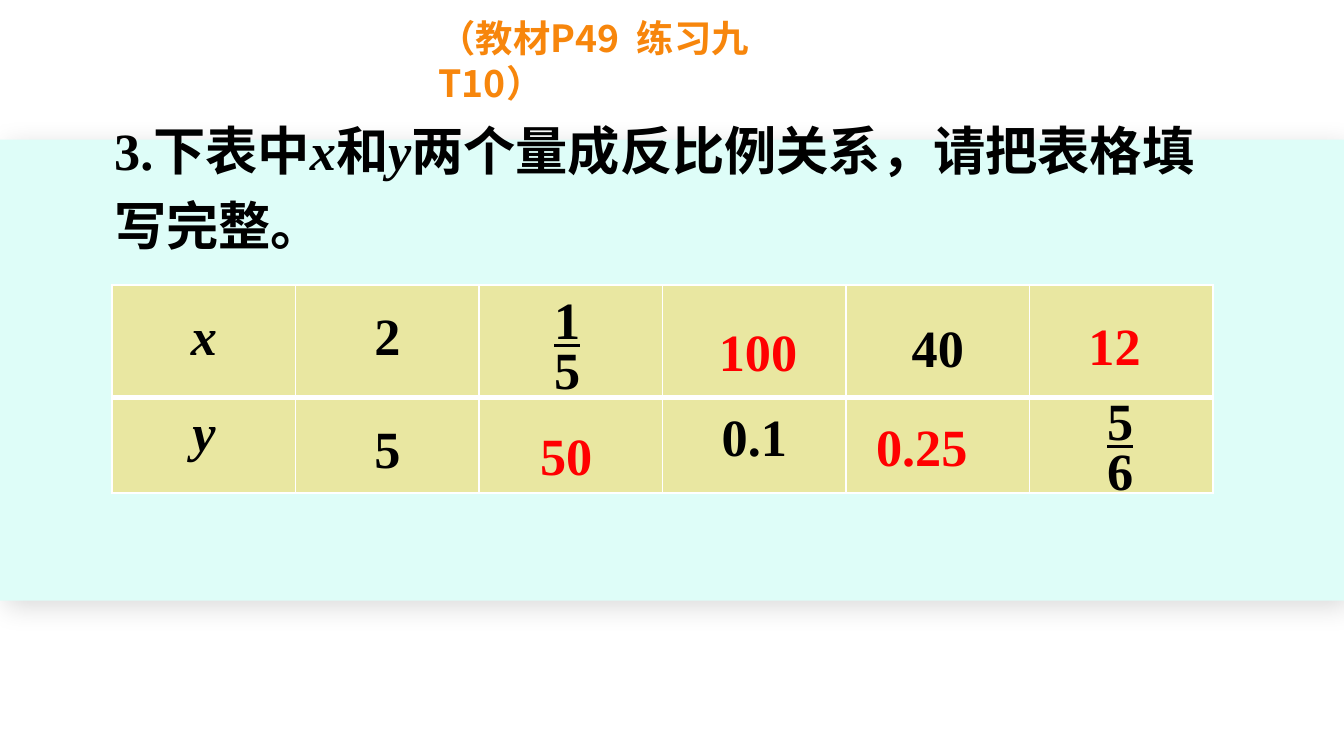
from dataclasses import dataclass
from typing import Optional

from lxml import etree
from pptx import Presentation
from pptx.dml.color import RGBColor
from pptx.enum.shapes import MSO_SHAPE
from pptx.enum.text import MSO_ANCHOR, MSO_AUTO_SIZE, PP_ALIGN
from pptx.oxml.ns import qn
from pptx.util import Pt

PX = 4572  # 200 px to the inch
PAGE_WIDTH, PAGE_HEIGHT = 2000, 1125
TITLE_ONLY = 5
RECTANGLE = MSO_SHAPE.RECTANGLE
TOP = MSO_ANCHOR.TOP
LEFT, CENTER = PP_ALIGN.LEFT, PP_ALIGN.CENTER
GROW, FIXED = MSO_AUTO_SIZE.SHAPE_TO_FIT_TEXT, MSO_AUTO_SIZE.NONE

SERIF, HAN = "Times New Roman", "Noto Sans CJK SC"
WHITE, BLACK, RED, ORANGE = "FFFFFF", "000000", "FF0000", "F7860C"
MINT, AMBER = "DEFDF8", "FFC000"

COLUMN_WIDTH = 273
ROW_HEIGHTS = (168, 142)
BOTTOM_BORDERS = (3, 1)


@dataclass(frozen=True)
class Entry:
    text: str
    spacing: float = 1.3
    italic: bool = False


@dataclass(frozen=True)
class Answer:
    text: str
    left: int
    top: int
    width: int
    height: int = 132
    spacing: float = 1.2
    auto_size: MSO_AUTO_SIZE = GROW


@dataclass(frozen=True)
class Fraction:
    numerator: str
    denominator: str
    left: int
    top: int
    height: int
    auto_size: MSO_AUTO_SIZE


QUESTION = (
    ("3.下表中", False),
    ("x", True),
    ("和", False),
    ("y", True),
    ("两个量成反比例关系，请把表格填写完整。", False),
)
ROWS: tuple[tuple[Optional[Entry], ...], ...] = (
    (Entry("x", italic=True), Entry("2"), None, None, Entry("40", 1.5), None),
    (Entry("y", 1.0, True), Entry("5"), None, Entry("0.1", 1.1), None, None),
)
ANSWERS = (
    Answer("50", 784, 601, 118),
    Answer("100", 1050, 446, 156),
    Answer("0.25", 1284, 607, 198, 140, 1.0, FIXED),
    Answer("12", 1600, 438, 118),
)
FRACTIONS = (
    Fraction("1", "5", 794, 436, 170, GROW),
    Fraction("5", "6", 1617, 586, 160, FIXED),
)


def color(value: str) -> RGBColor:
    return RGBColor.from_string(value)


def write(para, text: str, *, size: int = 28, font: str = SERIF, ink: str = BLACK,
          italic: bool = False, underline: bool = False,
          align=LEFT, spacing: float = 1.0) -> None:
    """Append one formatted bold run and set the paragraph's layout."""
    para.alignment = align
    para.line_spacing = spacing
    span = para.add_run()
    span.text = text
    span.font.name = font
    span.font.size = Pt(size)
    span.font.bold = True
    span.font.italic = italic
    span.font.underline = underline
    span.font.color.rgb = color(ink)
    latin = span.font._element.find(qn("a:latin"))
    latin.addnext(etree.Element(qn("a:ea"), typeface=HAN))


def place(box, left: int, top: int, width: int, height: int) -> None:
    box.left, box.top = left * PX, top * PX
    box.width, box.height = width * PX, height * PX


def add_text_box(page, left: int, top: int, width: int, height: int,
                 wrap: bool = True, auto_size=GROW):
    box = page.shapes.add_textbox(left * PX, top * PX, width * PX, height * PX)
    box.text_frame.word_wrap = wrap
    box.text_frame.auto_size = auto_size
    return box.text_frame


def add_band(page) -> None:
    band = page.shapes.add_shape(RECTANGLE, 0, 208 * PX, PAGE_WIDTH * PX, 686 * PX)
    band.fill.solid()
    band.fill.fore_color.rgb = color(MINT)
    band.line.fill.background()
    band.shadow.inherit = False
    effects = band.element.spPr.find(qn("a:effectLst"))
    shadow = etree.SubElement(effects, qn("a:outerShdw"), blurRad=str(Pt(15)),
                              dist=str(Pt(5)), dir=str(45 * 60000), rotWithShape="0")
    tint = etree.SubElement(shadow, qn("a:srgbClr"), val=BLACK)
    etree.SubElement(tint, qn("a:alpha"), val="15000")


def format_title(title) -> None:
    """Lay the question over the band, which is drawn before it."""
    title.element.getparent().append(title.element)
    place(title, 150, 147, 1704, 246)
    frame = title.text_frame
    frame.word_wrap = True
    frame.auto_size = GROW
    frame.vertical_anchor = TOP
    for text, italic in QUESTION:
        write(frame.paragraphs[0], text, italic=italic, spacing=1.2)


def style_cell(cell, bottom_width: int) -> None:
    cell.fill.solid()
    cell.fill.fore_color.rgb = color(AMBER)
    properties = cell._tc.tcPr
    tint = properties.find(".//" + qn("a:srgbClr"))
    etree.SubElement(tint, qn("a:alpha"), val="35000")
    sides = (("a:lnL", 1), ("a:lnR", 1), ("a:lnT", 1), ("a:lnB", bottom_width))
    for index, (side, width) in enumerate(sides):
        line = etree.Element(qn(side), w=str(Pt(width)))
        fill = etree.SubElement(line, qn("a:solidFill"))
        etree.SubElement(fill, qn("a:srgbClr"), val=WHITE)
        properties.insert(index, line)


def add_value_table(page) -> None:
    count = len(ROWS[0])
    table = page.shapes.add_table(len(ROWS), count, 167 * PX, 424 * PX,
                                  count * COLUMN_WIDTH * PX, sum(ROW_HEIGHTS) * PX).table
    table.first_row = table.horz_banding = False
    for column in table.columns:
        column.width = COLUMN_WIDTH * PX
    for row_index, entries in enumerate(ROWS):
        table.rows[row_index].height = ROW_HEIGHTS[row_index] * PX
        for column_index, entry in enumerate(entries):
            cell = table.cell(row_index, column_index)
            style_cell(cell, BOTTOM_BORDERS[row_index])
            if entry:
                write(cell.text_frame.paragraphs[0], entry.text, italic=entry.italic,
                      align=CENTER, spacing=entry.spacing)


def add_answer(page, answer: Answer) -> None:
    frame = add_text_box(page, answer.left, answer.top, answer.width, answer.height,
                         wrap=False, auto_size=answer.auto_size)
    write(frame.paragraphs[0], answer.text, ink=RED, spacing=answer.spacing)


def add_fraction(page, fraction: Fraction) -> None:
    """Stack the two numbers, the underline serving as the fraction bar."""
    frame = add_text_box(page, fraction.left, fraction.top, 100, fraction.height,
                         auto_size=fraction.auto_size)
    write(frame.paragraphs[0], fraction.numerator, underline=True,
          align=CENTER, spacing=0.8)
    write(frame.add_paragraph(), fraction.denominator, align=CENTER, spacing=0.8)


def main() -> None:
    deck = Presentation()
    deck.slide_width, deck.slide_height = PAGE_WIDTH * PX, PAGE_HEIGHT * PX
    page = deck.slides.add_slide(deck.slide_layouts[TITLE_ONLY])
    add_band(page)
    format_title(page.shapes.title)
    add_value_table(page)
    for answer in ANSWERS:
        add_answer(page, answer)
    reference = add_text_box(page, 633, 13, 628, 88)
    write(reference.paragraphs[0], "（教材P49  练习九T10）", size=20, font=HAN, ink=ORANGE)
    for fraction in FRACTIONS:
        add_fraction(page, fraction)
    deck.save("out.pptx")


if __name__ == "__main__":
    main()
